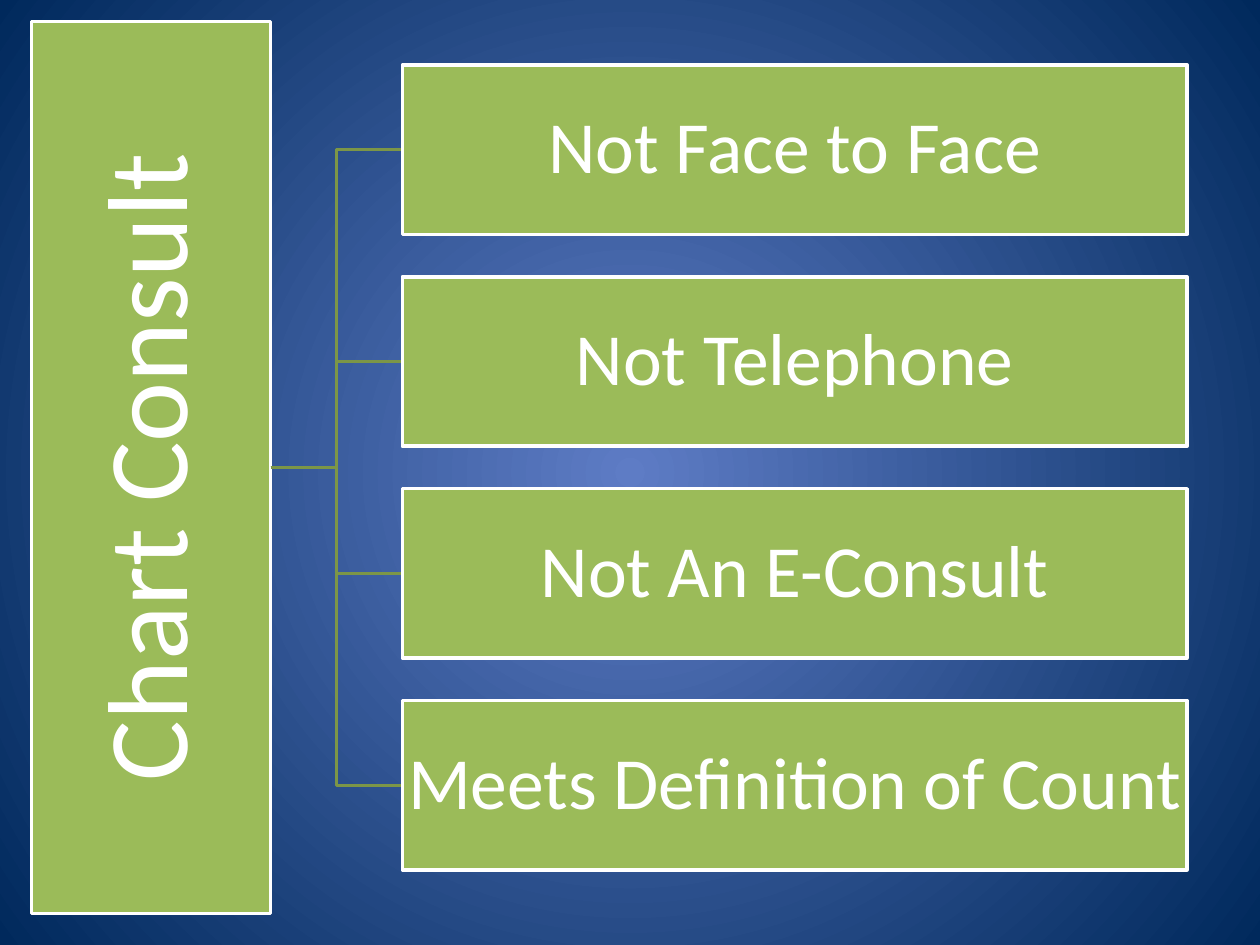
from lxml import etree
from pptx import Presentation
from pptx.dml.color import RGBColor
from pptx.enum.shapes import MSO_CONNECTOR, MSO_SHAPE
from pptx.enum.text import MSO_ANCHOR, MSO_AUTO_SIZE, PP_ALIGN
from pptx.oxml.ns import qn
from pptx.util import Inches, Pt

RECT, ELBOW = MSO_SHAPE.RECTANGLE, MSO_CONNECTOR.ELBOW
MIDDLE, CENTER, FIXED = MSO_ANCHOR.MIDDLE, PP_ALIGN.CENTER, MSO_AUTO_SIZE.NONE
COLORS = {"glow": "5E7CC5", "navy": "00295C", "leaf": "9BBB59",
          "stem": "7C9647", "white": "FFFFFF"}
ROOT = "Chart Consult"
ITEMS = ["Not Face to Face", "Not Telephone", "Not An E-Consult",
         "Meets Definition of Count"]


def rgb(name):
    """Return the named colour."""
    return RGBColor.from_string(COLORS[name])


def paint(slide):
    """Fill the background with a round gradient."""
    fill = slide.background.fill
    fill.gradient()
    for stop, name in zip(fill.gradient_stops, ("glow", "navy")):
        stop.color.rgb = rgb(name)
    grad = slide.background._cSld.find(".//" + qn("a:gradFill"))
    grad.remove(grad.find(qn("a:lin")))
    ring = etree.SubElement(grad, qn("a:path"), path="circle")
    etree.SubElement(ring, qn("a:fillToRect"),
                     l="50000", t="50000", r="50000", b="50000")


def style(shape, text, size, inset):
    """Give a box its fill, outline and centred text."""
    shape.fill.solid()
    shape.fill.fore_color.rgb = rgb("leaf")
    shape.line.color.rgb = rgb("white")
    shape.line.width = Pt(2)
    frame = shape.text_frame
    frame.text = text
    frame.auto_size = FIXED
    frame.word_wrap = True
    frame.vertical_anchor = MIDDLE
    frame.margin_left = frame.margin_right = Inches(inset)
    frame.margin_top = frame.margin_bottom = Inches(inset)
    para = frame.paragraphs[0]
    para.alignment = CENTER
    para.line_spacing = 0.9
    para.font.name = "Calibri"
    para.font.size = Pt(size)
    para.font.color.rgb = rgb("white")


def root(slide, x, y, w, h):
    """Turn the title into an upright bar that fills the box."""
    bar = slide.shapes.title
    bar.left, bar.top = int(x + (w - h) / 2), int(y + (h - w) / 2)
    bar.width, bar.height = int(h), int(w)
    bar.rotation = 270
    style(bar, ROOT, 65, 0.05)


def branch(slide, x, y, end, mid):
    """Draw an elbow line from the root to one item."""
    line = slide.shapes.add_connector(ELBOW, int(x), int(y), int(end), int(mid))
    line.line.color.rgb = rgb("stem")
    line.line.width = Pt(2)
    etree.SubElement(line._element.spPr, qn("a:effectLst"))


def tree(slide, x, y, w, h):
    """Place the root bar, its branches and the column of items."""
    bar, left, wide = w * 0.207, x + w * 0.321, w * 0.679
    tall = h * 0.19
    pitch = tall * 1.25
    mid = y + h / 2
    first = mid - pitch * (len(ITEMS) - 1) / 2
    rows = [first + i * pitch for i in range(len(ITEMS))]
    root(slide, x, y, bar, h)
    for row in reversed(rows):
        branch(slide, x + bar, mid, left, row)
    for text, row in zip(ITEMS, rows):
        box = slide.shapes.add_shape(RECT, int(left), int(row - tall / 2),
                                     int(wide), int(tall))
        box.shadow.inherit = False
        style(box, text, 42, 0.03)


def main():
    """Build and save the slide."""
    deck = Presentation()
    deck.slide_width, deck.slide_height = Inches(10), Inches(7.5)
    slide = deck.slides.add_slide(deck.slide_layouts[5])
    paint(slide)
    tree(slide, Inches(0.25), Inches(0.17), Inches(9.17), Inches(7.08))
    deck.save("out.pptx")


if __name__ == "__main__":
    main()
